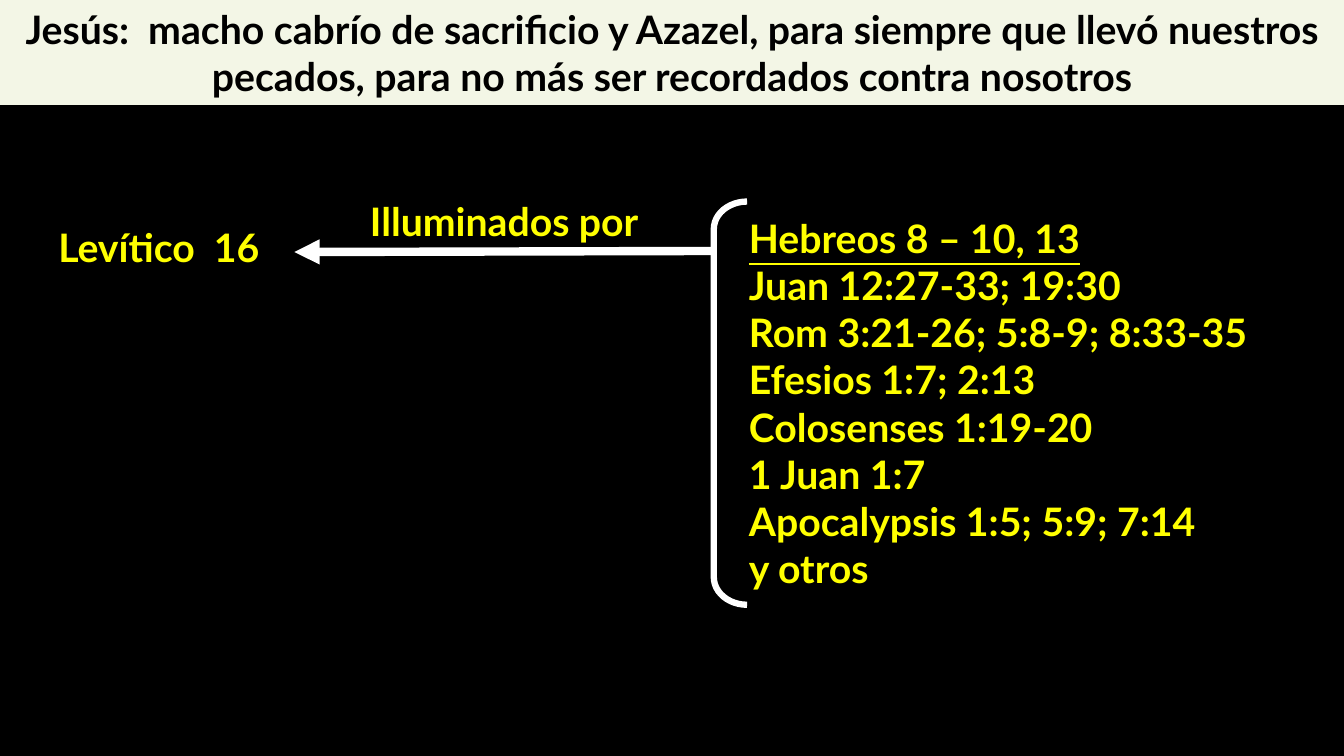
from dataclasses import dataclass

from lxml import etree
from pptx import Presentation
from pptx.dml.color import RGBColor
from pptx.enum.shapes import MSO_CONNECTOR, MSO_SHAPE
from pptx.enum.text import MSO_ANCHOR, MSO_AUTO_SIZE, PP_ALIGN
from pptx.oxml.ns import qn
from pptx.util import Inches, Pt

LEFT, CENTER = PP_ALIGN.LEFT, PP_ALIGN.CENTER
TOP = MSO_ANCHOR.TOP
NO_FIT = MSO_AUTO_SIZE.NONE
BRACKET = MSO_SHAPE.LEFT_BRACKET
STRAIGHT = MSO_CONNECTOR.STRAIGHT

BLACK = RGBColor(0x00, 0x00, 0x00)
WHITE = RGBColor(0xFF, 0xFF, 0xFF)
YELLOW = RGBColor(0xFF, 0xFF, 0x00)
CREAM = RGBColor(0xF3, 0xF6, 0xE6)
FONT = "Lato"
SIZE = Pt(28)


@dataclass
class Label:
    box: tuple[float, float, float, float]
    lines: list[str]
    align: PP_ALIGN = LEFT
    spacing: float = 1.0
    underlined: int = 0  # how many leading lines are underlined


TITLE = ("Jesús:  macho cabrío de sacrificio y Azazel, para siempre que llevó "
         "nuestros pecados, para no más ser recordados contra nosotros")

LABELS = [
    Label((0.48, 2.22, 2.83, 0.53), ["Levítico  16"], spacing=0.9),
    Label((3.29, 1.91, 3.42, 0.57), ["Illuminados por"], align=CENTER),
    Label((7.33, 2.08, 6.0, 3.87), [
        "Hebreos 8 – 10, 13",
        "Juan 12:27-33; 19:30",
        "Rom 3:21-26; 5:8-9; 8:33-35",
        "Efesios 1:7; 2:13",
        "Colosenses 1:19-20",
        "1 Juan 1:7",
        "Apocalypsis 1:5; 5:9; 7:14",
        "y otros",
    ], underlined=1),
]


def write(frame, lines: list[str], *, color: RGBColor, align: PP_ALIGN = LEFT,
          spacing: float = 1.0, underlined: int = 0) -> None:
    """Fill a text frame, one paragraph per line."""
    frame.word_wrap = True
    frame.auto_size = NO_FIT
    frame.vertical_anchor = TOP
    for i, line in enumerate(lines):
        para = frame.add_paragraph() if i else frame.paragraphs[0]
        para.alignment = align
        para.line_spacing = spacing
        para.space_before = Pt(0)
        run = para.add_run()
        run.text = line
        font = run.font
        font.name, font.size, font.bold = FONT, SIZE, True
        font.color.rgb = color
        if i < underlined:
            font.underline = True


def add_label(slide, label: Label) -> None:
    box = slide.shapes.add_textbox(*map(Inches, label.box))
    write(box.text_frame, label.lines, color=YELLOW, align=label.align,
          spacing=label.spacing, underlined=label.underlined)


def add_title(slide) -> None:
    title = slide.shapes.title
    title.left, title.top = Inches(0), Inches(0)
    title.width, title.height = Inches(13.33), Inches(1.04)
    title.fill.solid()
    title.fill.fore_color.rgb = CREAM
    write(title.text_frame, [TITLE], color=BLACK, align=CENTER)


def add_bracket(slide) -> None:
    shape = slide.shapes.add_shape(
        BRACKET, Inches(7.08), Inches(2), Inches(0.33), Inches(4))
    shape.shadow.inherit = False
    shape.adjustments[0] = 0.83
    shape.fill.background()
    shape.line.color.rgb = WHITE
    shape.line.width = Pt(4.5)


def add_arrow(slide) -> None:
    arrow = slide.shapes.add_connector(
        STRAIGHT, Inches(7.08), Inches(2.49), Inches(2.92), Inches(2.5))
    arrow.line.color.rgb = WHITE
    arrow.line.width = Pt(6)
    props = arrow.line._get_or_add_ln()
    etree.SubElement(props, qn("a:tailEnd"), type="triangle")
    etree.SubElement(arrow._element.spPr, qn("a:effectLst"))


def main() -> None:
    deck = Presentation()
    deck.slide_width, deck.slide_height = Inches(13.33), Inches(7.5)
    slide = deck.slides.add_slide(deck.slide_layouts.get_by_name("Title Only"))
    slide.background.fill.solid()
    slide.background.fill.fore_color.rgb = BLACK

    # Heading band
    add_title(slide)

    # Scripture references
    for label in LABELS:
        add_label(slide, label)

    # Bracket and the arrow leading from it
    add_bracket(slide)
    add_arrow(slide)

    deck.save("out.pptx")


if __name__ == "__main__":
    main()
